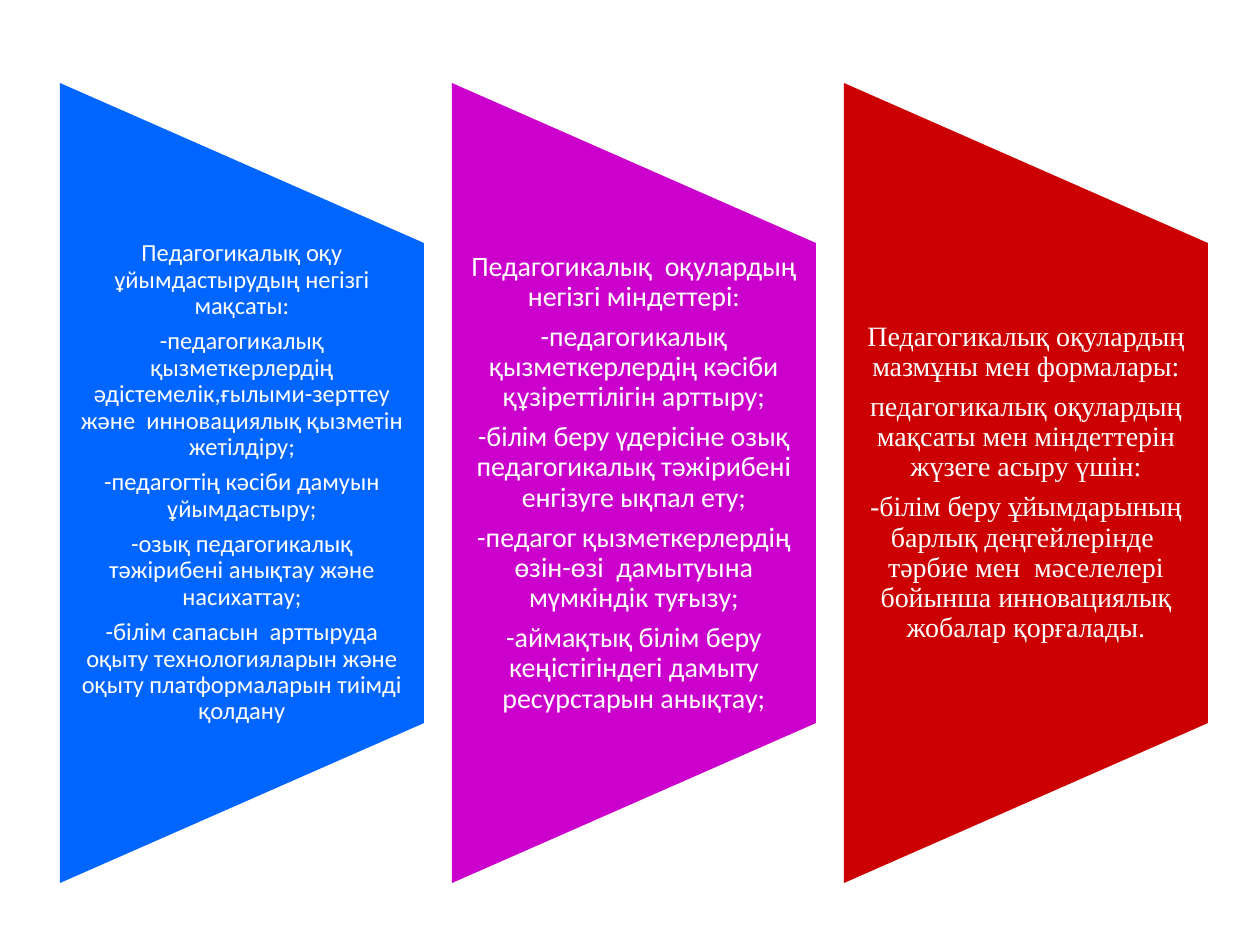
import pptx
import pptx.util
from pptx.dml.color import RGBColor
from pptx.enum.shapes import MSO_SHAPE
from pptx.enum.text import MSO_ANCHOR, PP_ALIGN

PX = 914400 / 126  # EMU per px

BLUE = RGBColor(0x00, 0x66, 0xFF)
PURPLE = RGBColor(0xCC, 0x00, 0xCC)
RED = RGBColor(0xCC, 0x00, 0x00)
WHITE = RGBColor(0xFF, 0xFF, 0xFF)

# Row of panels
PANEL_LEFT, PANEL_TOP = 60, 83
PANEL_WIDTH, PANEL_HEIGHT = 364, 800
PANEL_PITCH = 392

# Fill, font, size in points, side inset in px, paragraphs
PANELS = [
    (BLUE, "Calibri", 14, 13, [
        "Педагогикалық оқу ұйымдастырудың негізгі мақсаты:",
        "-педагогикалық қызметкерлердің әдістемелік,ғылыми-зерттеу және  инновациялық қызметін жетілдіру;",
        "-педагогтің кәсіби дамуын ұйымдастыру;",
        "-озық педагогикалық тәжірибені анықтау және насихаттау;",
        "-білім сапасын  арттыруда оқыту технологияларын және оқыту платформаларын тиімді қолдану",
    ]),
    (PURPLE, "Calibri", 16, 14, [
        "Педагогикалық  оқулардың негізгі міндеттері:",
        "-педагогикалық қызметкерлердің кәсіби құзіреттілігін арттыру;",
        "-білім беру үдерісіне озық педагогикалық тәжірибені енгізуге ықпал ету;",
        "-педагог қызметкерлердің өзін-өзі  дамытуына мүмкіндік туғызу;",
        "-аймақтық білім беру кеңістігіндегі дамыту ресурстарын анықтау;",
    ]),
    (RED, "Times New Roman", 16, 14, [
        "Педагогикалық оқулардың мазмұны мен формалары:",
        "педагогикалық оқулардың мақсаты мен міндеттерін жүзеге асыру үшін:",
        "-білім беру ұйымдарының барлық деңгейлерінде  тәрбие мен  мәселелері бойынша инновациялық жобалар қорғалады.",
    ]),
]


def px(length):
    return pptx.util.Emu(round(length * PX))


def add_panel(slide, left, top, width, height, panel):
    fill, font_name, size, inset, paragraphs = panel

    # Trapezoid, turned a quarter to the left about the centre of the box
    turn = (height - width) / 2
    trapezoid = slide.shapes.add_shape(
        MSO_SHAPE.FLOWCHART_MANUAL_OPERATION,
        px(left - turn), px(top + turn), px(height), px(width))
    trapezoid.rotation = 270
    trapezoid.shadow.inherit = False
    trapezoid.fill.solid()
    trapezoid.fill.fore_color.rgb = fill
    trapezoid.line.fill.background()

    # Upright text in the middle three fifths of the height
    body = slide.shapes.add_textbox(
        px(left), px(top + height / 5), px(width), px(height * 3 / 5))
    frame = body.text_frame
    frame.word_wrap = True
    frame.vertical_anchor = MSO_ANCHOR.MIDDLE
    frame.margin_left = frame.margin_right = px(inset)
    frame.margin_top = frame.margin_bottom = 0
    for index, wording in enumerate(paragraphs):
        paragraph = frame.add_paragraph() if index else frame.paragraphs[0]
        paragraph.alignment = PP_ALIGN.CENTER
        paragraph.line_spacing = 0.9
        paragraph.space_after = pptx.util.Pt(size * 0.35)
        run = paragraph.add_run()
        run.text = wording
        run.font.name = font_name
        run.font.size = pptx.util.Pt(size)
        run.font.color.rgb = WHITE


def main():
    deck = pptx.Presentation()
    deck.slide_width, deck.slide_height = px(1260), px(945)
    slide = deck.slides.add_slide(deck.slide_layouts[6])
    for column, panel in enumerate(PANELS):
        add_panel(slide, PANEL_LEFT + column * PANEL_PITCH, PANEL_TOP,
                  PANEL_WIDTH, PANEL_HEIGHT, panel)
    deck.save("out.pptx")


if __name__ == "__main__":
    main()
